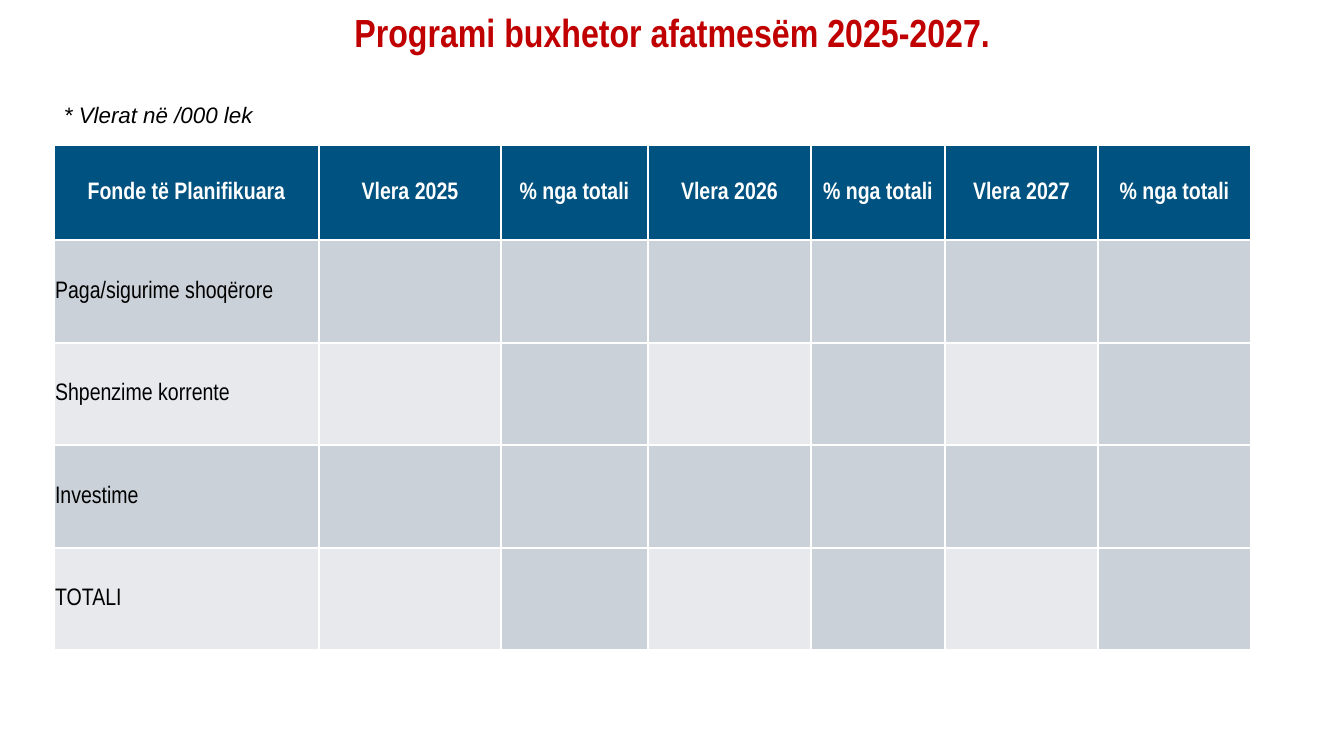
import lxml.etree
import pptx
import pptx.dml.color
import pptx.enum.text
import pptx.oxml.ns
import pptx.util

EMU_PER_PX = 914400 / 100.8
RED = pptx.dml.color.RGBColor(0xC0, 0x00, 0x00)
BLACK = pptx.dml.color.RGBColor(0x00, 0x00, 0x00)
WHITE = pptx.dml.color.RGBColor(0xFF, 0xFF, 0xFF)
NAVY = pptx.dml.color.RGBColor(0x00, 0x53, 0x80)
GREY = pptx.dml.color.RGBColor(0xCB, 0xD1, 0xD8)
PALE = pptx.dml.color.RGBColor(0xE7, 0xE9, 0xED)

ALIGN = pptx.enum.text.PP_ALIGN
ANCHOR = pptx.enum.text.MSO_ANCHOR

SHARE = "% nga totali"
HEADERS = ["Fonde të Planifikuara", "Vlera 2025", SHARE, "Vlera 2026", SHARE,
           "Vlera 2027", SHARE]
FUNDS = ["Paga/sigurime shoqërore", "Shpenzime korrente", "Investime", "TOTALI"]
COL_WIDTHS = [265, 182, 147, 163, 134, 153, 153]
ROW_HEIGHTS = [95, 103, 102, 103, 102]


def px(n):
    return pptx.util.Emu(round(n * EMU_PER_PX))


class BudgetSlide:
    font = "Arial Narrow"
    thin, thick = 1, 1.5

    def __init__(self, prs):
        self.s = prs.slides.add_slide(prs.slide_layouts[6])

    def set_text(self, tf, text, size, color, align=ALIGN.LEFT, bold=False,
                 italic=False, font=None):
        p = tf.paragraphs[0]
        p.text = text
        p.alignment = align
        f = p.runs[0].font
        f.name = font or self.font
        f.size = pptx.util.Pt(size)
        f.color.rgb = color
        f.bold, f.italic = bold, italic

    def text(self, box, text, size, color, top=5, wrap=True, **style):
        tf = self.s.shapes.add_textbox(*map(px, box)).text_frame
        tf.word_wrap = wrap
        tf.margin_top = px(top)
        self.set_text(tf, text, size, color, **style)

    def border(self, cell, side, width):
        tcPr = cell._tc.get_or_add_tcPr()
        ln = lxml.etree.SubElement(tcPr, pptx.oxml.ns.qn(f"a:ln{side}"),
                                   w=str(pptx.util.Pt(width)))
        fill = lxml.etree.SubElement(ln, pptx.oxml.ns.qn("a:solidFill"))
        lxml.etree.SubElement(fill, pptx.oxml.ns.qn("a:srgbClr"), val=str(WHITE))

    def edge_width(self, edge, col):
        """Width of the horizontal edge above row number `edge`."""
        inner_share = HEADERS[col] == SHARE and 1 < edge < len(ROW_HEIGHTS)
        return self.thick if edge == 1 or inner_share else self.thin

    def cell(self, cell, row, col):
        for side, width in (("L", self.thin), ("R", self.thin),
                            ("T", self.edge_width(row, col)),
                            ("B", self.edge_width(row + 1, col))):
            self.border(cell, side, width)
        pale = row % 2 == 0 and HEADERS[col] != SHARE
        cell.fill.solid()
        cell.fill.fore_color.rgb = NAVY if row == 0 else PALE if pale else GREY
        cell.vertical_anchor = ANCHOR.MIDDLE
        cell.margin_left = cell.margin_right = cell.margin_top = px(1)
        cell.margin_bottom = 0
        if row == 0:
            self.set_text(cell.text_frame, HEADERS[col], 17, WHITE, ALIGN.CENTER, True)
        elif col == 0:
            self.set_text(cell.text_frame, FUNDS[row - 1], 17, BLACK)

    def table(self, left, top):
        table = self.s.shapes.add_table(
            len(ROW_HEIGHTS), len(COL_WIDTHS), px(left), px(top),
            px(sum(COL_WIDTHS)), px(sum(ROW_HEIGHTS))).table
        table.horz_banding = False
        for column, width in zip(table.columns, COL_WIDTHS):
            column.width = px(width)
        for row, height in enumerate(ROW_HEIGHTS):
            table.rows[row].height = px(height)
            for col in range(len(COL_WIDTHS)):
                self.cell(table.cell(row, col), row, col)


def main():
    prs = pptx.Presentation()
    prs.slide_width, prs.slide_height = px(1344), px(756)
    slide = BudgetSlide(prs)
    slide.table(54, 145)
    slide.text((0, 0, 1344, 84), "Programi buxhetor afatmesëm 2025-2027.", 28, RED,
               top=8, align=ALIGN.CENTER, bold=True)
    slide.text((54, 96, 215, 37), "* Vlerat në /000 lek", 16, BLACK,
               wrap=False, italic=True, font="Arial")
    prs.save("out.pptx")


if __name__ == "__main__":
    main()
